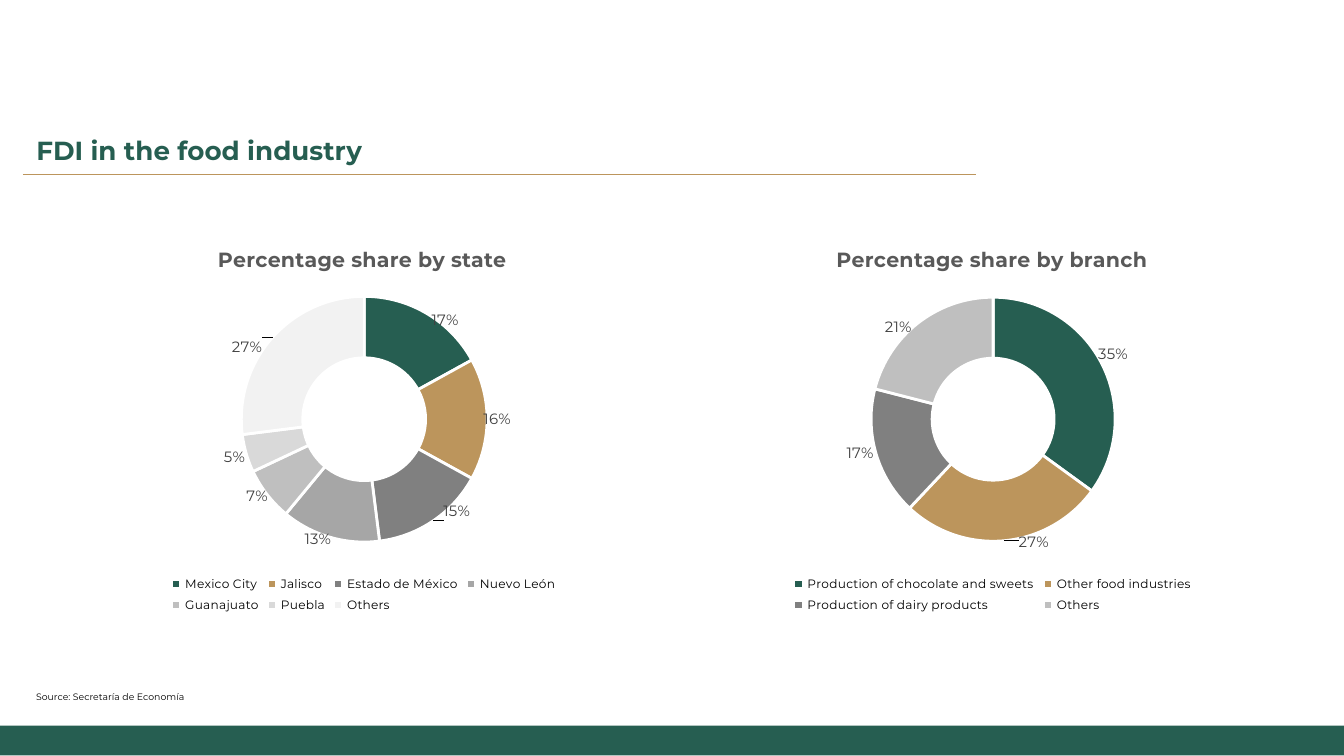
from lxml.etree import SubElement
from pptx import Presentation
from pptx.chart.data import CategoryChartData
from pptx.dml.color import RGBColor
from pptx.enum.chart import XL_CHART_TYPE, XL_LEGEND_POSITION
from pptx.enum.shapes import MSO_CONNECTOR, MSO_SHAPE
from pptx.enum.text import MSO_ANCHOR, PP_ALIGN
from pptx.oxml import parse_xml
from pptx.oxml.ns import nsdecls, qn
from pptx.util import Inches, Pt

GREEN, GOLD, GREY = "265E51", "BC955C", "808080"


def color(value):
    return RGBColor.from_string(value)


def manual_layout(inner=False, edge=True, **fractions):
    """Chart layout in fractions of the chart; edge=False means an offset."""
    tags = {"layoutTarget": "inner"} if inner else {}
    if edge:
        tags.update(xMode="edge", yMode="edge")
    tags.update(fractions)
    body = "".join(f'<c:{tag} val="{value}"/>' for tag, value in tags.items())
    return parse_xml(f"<c:layout {nsdecls('c')}><c:manualLayout>{body}"
                     "</c:manualLayout></c:layout>")


def place_after(parent, tag, layout):
    """Replace any layout of parent, putting the new one after the given tag."""
    for old in parent.findall(qn("c:layout")):
        parent.remove(old)
    if tag is None:
        parent.insert(0, layout)
    else:
        parent.find(qn(tag)).addnext(layout)


class SlideBuilder:
    font_name = "Montserrat"

    def __init__(self, deck):
        self.page = deck.slides.add_slide(deck.slide_layouts[5])

    def style(self, font, size, hex_color, bold=False):
        formats = {"name": self.font_name, "size": Pt(size), "bold": bold}
        for name, value in formats.items():
            setattr(font, name, value)
        font.color.rgb = color(hex_color)

    def fill_text(self, box, text, size, hex_color, bold=False):
        frame = box.text_frame
        frame.word_wrap = True
        frame.vertical_anchor = MSO_ANCHOR.MIDDLE
        para = frame.paragraphs[0]
        para.alignment = PP_ALIGN.LEFT
        span = para.add_run()
        span.text = text
        self.style(span.font, size, hex_color, bold)

    def title(self, text, left, top, width, height):
        box = self.page.shapes.title
        places = {"left": left, "top": top, "width": width, "height": height}
        for name, value in places.items():
            setattr(box, name, Inches(value))
        self.fill_text(box, text, 14, GREEN, True)

    def text(self, text, size, *place):
        box = self.page.shapes.add_textbox(*map(Inches, place))
        self.fill_text(box, text, size, "000000")

    def bar(self, *place):
        shape = self.page.shapes.add_shape(MSO_SHAPE.RECTANGLE, *map(Inches, place))
        shape.shadow.inherit = False
        shape.fill.solid()
        shape.fill.fore_color.rgb = color(GREEN)
        shape.line.fill.background()

    def rule(self, *ends):
        line = self.page.shapes.add_connector(MSO_CONNECTOR.STRAIGHT, *map(Inches, ends))
        line.line.color.rgb = color(GOLD)
        line.line.width = Pt(0.75)
        SubElement(line._element.spPr, qn("a:effectLst"))

    def doughnut(self, title, place, slices, title_x, plot_box, legend_box):
        names, values, colors, offsets = zip(*slices)
        data = CategoryChartData(number_format="0%")
        data.categories = names
        data.add_series("Series 1", values)
        chart = self.page.shapes.add_chart(
            XL_CHART_TYPE.DOUGHNUT, *map(Inches, place), data).chart
        chart.font.name, chart.font.size = "Arial", Pt(10)
        chart.font.color.rgb = color("000000")

        # Title, legend and ring
        chart.has_title = True
        span = chart.chart_title.text_frame.paragraphs[0].add_run()
        span.text = title
        self.style(span.font, 11, "595959", True)
        place_after(chart.chart_title._element, "c:tx", manual_layout(x=title_x, y=0.04))
        chart.has_legend = True
        chart.legend.position = XL_LEGEND_POSITION.BOTTOM
        chart.legend.include_in_layout = False
        self.style(chart.legend.font, 6.5, "000000")
        place_after(chart.legend._element, "c:legendPos", manual_layout(**legend_box))
        plot = chart.plots[0]
        plot.vary_by_categories = True
        plot._element.find(qn("c:holeSize")).set("val", "75")
        place_after(plot._element.getparent(), None, manual_layout(inner=True, **plot_box))

        # Slices, each with its label moved outside the ring
        series = plot.series[0]
        labels = series.data_labels
        labels.show_value = True
        labels.number_format, labels.number_format_is_linked = "0%", False
        self.style(labels.font, 8, "404040")
        for index, hex_color in enumerate(colors):
            point = series.points[index]
            point.format.fill.solid()
            point.format.fill.fore_color.rgb = color(hex_color)
            point.format.line.color.rgb = color("FFFFFF")
            point.format.line.width = Pt(1.5)
            self.style(point.data_label.font, 8, "404040")
        for label, (x, y) in zip(series._element.iter(qn("c:dLbl")), offsets):
            place_after(label, "c:idx", manual_layout(edge=False, x=x, y=y))


def main():
    deck = Presentation()
    deck.slide_width = Inches(10)
    deck.slide_height = deck.slide_width * 9 // 16
    slide = SlideBuilder(deck)

    # Footer band and heading
    slide.bar(0, 5.4, 10, 0.22)
    slide.rule(0.17, 1.3, 7.26, 1.3)
    slide.title("FDI in the food industry", 0.17, 0.95, 7.09, 0.34)

    # Charts: name, share, colour, label offset
    states = [
        ("Mexico City", 0.17, GREEN, (0.05, -0.05)),
        ("Jalisco", 0.16, GOLD, (0.06, 0)),
        ("Estado de México", 0.15, GREY, (0.06, 0.04)),
        ("Nuevo León", 0.13, "A6A6A6", (-0.03, 0.08)),
        ("Guanajuato", 0.07, "BFBFBF", (-0.05, 0.05)),
        ("Puebla", 0.05, "D9D9D9", (-0.06, 0.03)),
        ("Others", 0.27, "F2F2F2", (-0.07, -0.03)),
    ]
    branches = [
        ("Production of chocolate and sweets", 0.35, GREEN, (0.06, -0.06)),
        ("Other food industries", 0.27, GOLD, (0.05, 0.08)),
        ("Production of dairy products", 0.17, GREY, (-0.07, 0.02)),
        ("Others", 0.21, "BFBFBF", (-0.06, -0.05)),
    ]
    slide.doughnut("Percentage share by state", (0.17, 1.67, 5.08, 2.93), states, 0.28,
                   {"x": 0.32, "y": 0.18, "w": 0.36, "h": 0.63},
                   {"x": 0.21, "y": 0.88, "w": 0.58, "h": 0.12})
    slide.doughnut("Percentage share by branch", (5, 1.67, 4.78, 2.93), branches, 0.25,
                   {"x": 0.31, "y": 0.18, "w": 0.38, "h": 0.63},
                   {"x": 0.18, "y": 0.88, "w": 0.64, "h": 0.12})

    # Source note
    slide.text("Source: Secretaría de Economía", 5, 0.17, 5.09, 4.04, 0.19)
    deck.save("out.pptx")


if __name__ == "__main__":
    main()
